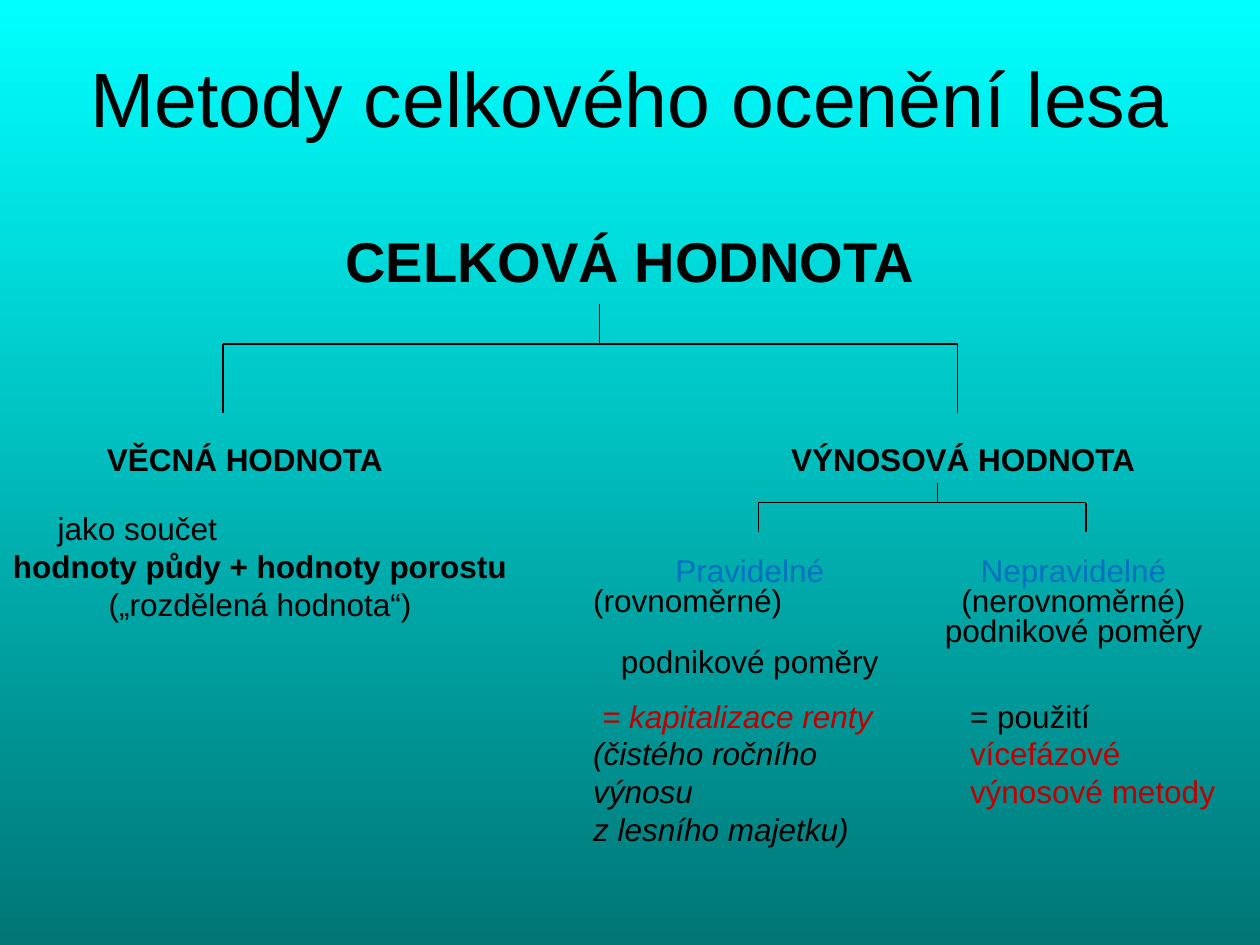
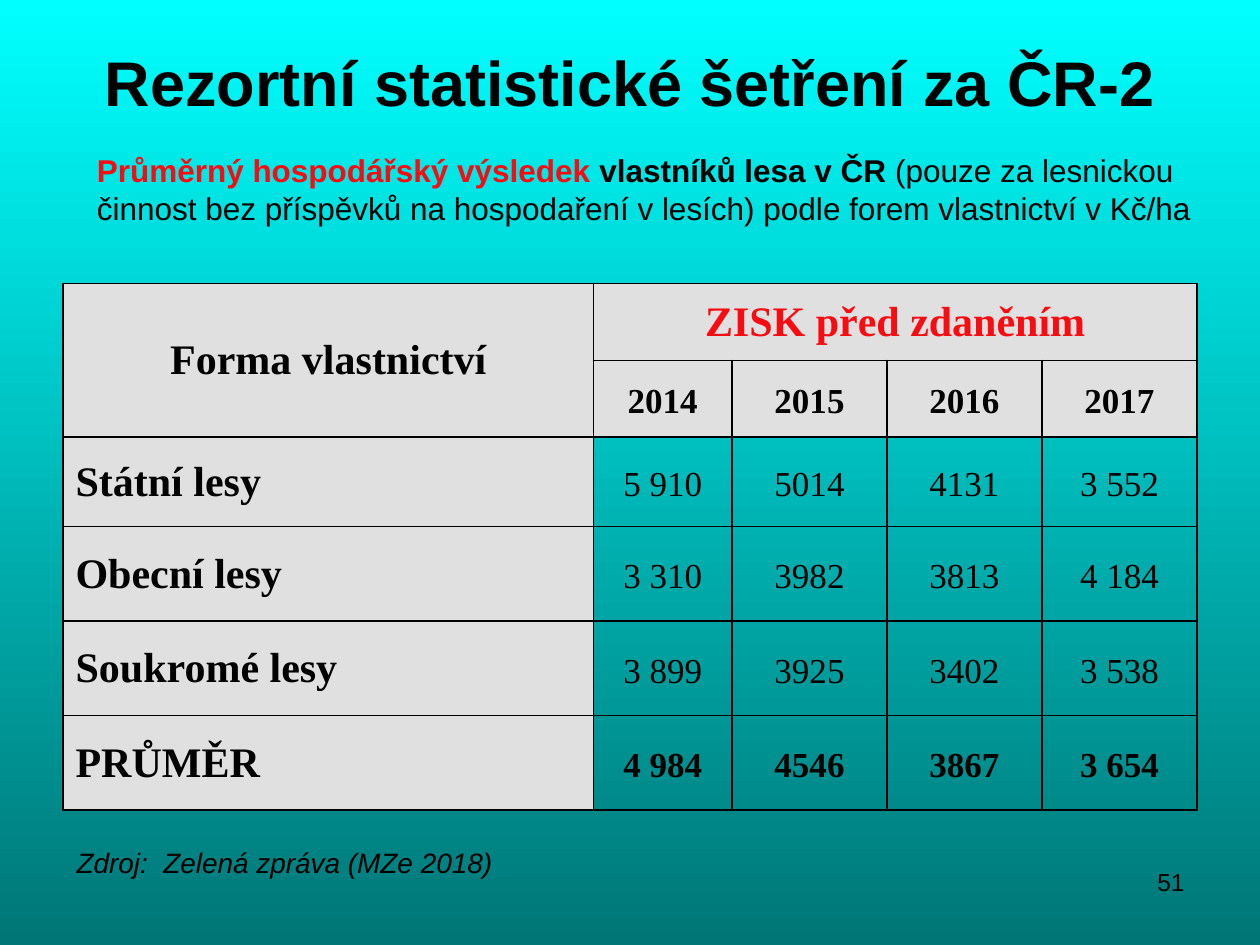
from dataclasses import dataclass
from typing import Optional

import pptx
import pptx.dml.color
import pptx.enum.shapes
import pptx.enum.text
import pptx.oxml
import pptx.oxml.ns
import pptx.util
from pptx.slide import Slide

ALIGN = pptx.enum.text.PP_ALIGN
ANCHOR = pptx.enum.text.MSO_ANCHOR
BLACK, RED, DARK_RED, BLUE, GREY = "000000", "F80C12", "C00000", "0070C0", "E0E0E0"
GRADIENT = ("00FFFF", "007676")
SANS, SERIF = "Arial", "Times New Roman"

# The slide is a grid of 100 columns by 75 rows.
COLS, ROWS = 100, 75
WIDTH, HEIGHT = pptx.util.Inches(10), pptx.util.Inches(7.5)


@dataclass(frozen=True)
class Box:
    left: float
    top: float
    width: float
    height: float


@dataclass(frozen=True)
class Run:
    text: str
    color: Optional[str] = None
    bold: Optional[bool] = None
    italic: Optional[bool] = None


@dataclass(frozen=True)
class Para:
    runs: tuple[Run, ...]
    align: Optional[int] = None
    indent: float = 0
    before: float = 0


@dataclass(frozen=True)
class Fork:
    """A stem that falls to a bar, with a drop at each end of the bar."""
    stem: float
    top: float
    bar: float
    bottom: float
    left: float
    right: float


def x(cols: float) -> int:
    return round(WIDTH * cols / COLS)


def y(rows: float) -> int:
    return round(HEIGHT * rows / ROWS)


def rgb(color: str) -> pptx.dml.color.RGBColor:
    return pptx.dml.color.RGBColor.from_string(color)


def line(text: str, align: Optional[int] = None, indent: float = 0,
         before: float = 0, **style) -> Para:
    """A paragraph of one run."""
    return Para((Run(text, **style),), align, indent, before)


def write(tf, *paras: Para | str, size: float = 18, font: str = SANS,
          color: str = BLACK, bold: bool = False, italic: bool = False,
          align: int = ALIGN.LEFT, spacing: float = 1.0) -> None:
    for i, para in enumerate(paras):
        para = line(para) if isinstance(para, str) else para
        p = tf.paragraphs[0] if i == 0 else tf.add_paragraph()
        p.alignment = align if para.align is None else para.align
        p.line_spacing = spacing
        p.space_before = pptx.util.Pt(para.before)
        if para.indent:
            p._p.get_or_add_pPr().set("marL", str(x(para.indent)))
        for run in para.runs:
            r = p.add_run()
            r.text = run.text
            r.font.name, r.font.size = font, pptx.util.Pt(size)
            r.font.color.rgb = rgb(run.color or color)
            r.font.bold = bold if run.bold is None else run.bold
            r.font.italic = italic if run.italic is None else run.italic


def add_text(slide: Slide, box: Box, *paras: Para | str,
             anchor: int = ANCHOR.TOP, **style) -> None:
    sp = slide.shapes.add_textbox(x(box.left), y(box.top), x(box.width), y(box.height))
    tf = sp.text_frame
    tf.word_wrap = True
    tf.vertical_anchor = anchor
    write(tf, *paras, **style)


def add_slide(prs, title: str, title_height: float, **style) -> Slide:
    """A blank slide with the shared background and centred title."""
    slide = prs.slides.add_slide(prs.slide_layouts[6])
    fill = slide.background.fill
    fill.gradient()
    fill.gradient_angle = 270
    for stop, color, position in zip(fill.gradient_stops, GRADIENT, (0, 1)):
        stop.color.rgb = rgb(color)
        stop.position = position
    add_text(slide, Box(5, 3, 90, title_height), title,
             anchor=ANCHOR.MIDDLE, align=ALIGN.CENTER, **style)
    return slide


def add_line(slide: Slide, x1: float, y1: float, x2: float, y2: float) -> None:
    cxn = slide.shapes.add_connector(
        pptx.enum.shapes.MSO_CONNECTOR.STRAIGHT, x(x1), y(y1), x(x2), y(y2))
    cxn.line.color.rgb = rgb(BLACK)
    cxn.line.width = pptx.util.Pt(0.75)
    cxn._element.spPr.append(pptx.oxml.parse_xml(
        f'<a:effectLst {pptx.oxml.ns.nsdecls("a")}/>'))


def add_fork(slide: Slide, fork: Fork) -> None:
    add_line(slide, fork.stem, fork.top, fork.stem, fork.bar)
    add_line(slide, fork.left, fork.bar, fork.right, fork.bar)
    for end in (fork.left, fork.right):
        add_line(slide, end, fork.bar, end, fork.bottom)


def format_cell(cell, fill: Optional[str]) -> None:
    """Fill the cell, or leave it clear, and rule its four sides."""
    cell.vertical_anchor = ANCHOR.MIDDLE
    if fill:
        cell.fill.solid()
        cell.fill.fore_color.rgb = rgb(fill)
    else:
        cell.fill.background()
    tc_pr = cell._tc.get_or_add_tcPr()
    for i, side in enumerate("LRTB"):
        tc_pr.insert(i, pptx.oxml.parse_xml(
            f'<a:ln{side} {pptx.oxml.ns.nsdecls("a")} w="12700"><a:solidFill>'
            f'<a:srgbClr val="{BLACK}"/></a:solidFill></a:ln{side}>'))


def add_profit_table(slide: Slide) -> None:
    widths = (42.1, 11, 12.3, 12.3, 12.3)
    heights = (6.1, 6.1, 7.1, 7.5, 7.5, 7.5)
    years = ("2014", "2015", "2016", "2017")
    owners = {
        "Státní lesy": ("5 910", "5014", "4131", "3 552"),
        "Obecní lesy": ("3 310", "3982", "3813", "4 184"),
        "Soukromé lesy": ("3 899", "3925", "3402", "3 538"),
        "PRŮMĚR": ("4 984", "4546", "3867", "3 654"),
    }
    table = slide.shapes.add_table(
        len(heights), len(widths), x(5), y(22.5), x(sum(widths)), y(sum(heights))).table
    table.first_row = table.horz_banding = False
    for col, width in zip(table.columns, widths):
        col.width = x(width)
    for row, height in zip(table.rows, heights):
        row.height = y(height)
    for i, row in enumerate(table.rows):
        for j, cell in enumerate(row.cells):
            format_cell(cell, GREY if i < 2 or j == 0 else None)

    heading = dict(size=24, font=SERIF, bold=True)
    table.cell(0, 0).merge(table.cell(1, 0))
    table.cell(0, 1).merge(table.cell(0, len(years)))
    write(table.cell(0, 0).text_frame, "Forma vlastnictví", align=ALIGN.CENTER, **heading)
    write(table.cell(0, 1).text_frame, "ZISK před zdaněním", color=RED,
          align=ALIGN.CENTER, **heading)
    for i, owner in enumerate(owners, start=2):
        write(table.cell(i, 0).text_frame, owner, **heading)
    for i, values in enumerate((years, *owners.values()), start=1):
        for j, value in enumerate(values, start=1):
            cell = table.cell(i, j)
            cell.margin_left = cell.margin_right = x(0.7)
            cell.margin_top = cell.margin_bottom = 0
            write(cell.text_frame, value, size=20, font=SERIF,
                  bold=i in (1, len(heights) - 1), align=ALIGN.CENTER, spacing=1.15)


def build_methods(prs) -> None:
    slide = add_slide(prs, "Metody celkového ocenění lesa", 9.3, size=44)
    add_text(slide, Box(5, 17.5, 90, 6), "CELKOVÁ HODNOTA", size=32, bold=True,
             align=ALIGN.CENTER)
    add_fork(slide, Fork(47.6, 24.1, 27.3, 32.8, 17.7, 76))
    add_fork(slide, Fork(74.4, 38.3, 39.9, 42.2, 60.2, 86.2))
    add_text(slide, Box(7.5, 34.4, 25.6, 4), "VĚCNÁ HODNOTA", bold=True)
    add_text(slide, Box(61.8, 34.4, 31.5, 4), "VÝNOSOVÁ HODNOTA", bold=True)
    add_text(slide, Box(0, 39.9, 41.3, 10),
             line("jako součet", align=ALIGN.LEFT, indent=3.6),
             line("hodnoty půdy + hodnoty porostu", bold=True),
             "(„rozdělená hodnota“)", align=ALIGN.CENTER)

    conditions = dict(align=ALIGN.CENTER, spacing=0.8)
    add_text(slide, Box(46.1, 43.8, 26.8, 8.3),
             line("Pravidelné", color=BLUE),
             line("(rovnoměrné)", align=ALIGN.LEFT),
             line("podnikové poměry", before=17.3), **conditions)
    add_text(slide, Box(72, 43.8, 26.4, 8.3),
             line("Nepravidelné", color=BLUE),
             "(nerovnoměrné)", "podnikové poměry", **conditions)
    add_text(slide, Box(46.1, 54.8, 26.8, 13.1),
             line("= kapitalizace renty", indent=0.7, color=DARK_RED),
             "(čistého ročního výnosu", "z lesního majetku)", italic=True)
    add_text(slide, Box(76, 54.8, 22.8, 10.1),
             Para((Run("= použití "), Run("vícefázové výnosové metody", DARK_RED))))


def build_survey(prs) -> None:
    slide = add_slide(prs, "Rezortní statistické šetření za ČR-2", 6.9, size=36, bold=True)
    add_text(slide, Box(6.7, 11.5, 89.8, 7.1), Para((
        Run("Průměrný hospodářský výsledek", RED, bold=True),
        Run(" vlastníků lesa v ČR", bold=True),
        Run(" (pouze za lesnickou činnost bez příspěvků na hospodaření v lesích)"
            " podle forem vlastnictví v Kč/ha"))))
    add_profit_table(slide)
    add_text(slide, Box(5.1, 66.6, 61.4, 3.7), "Zdroj:  Zelená zpráva (MZe 2018)",
             size=16, italic=True)
    add_text(slide, Box(71.7, 68.3, 23.3, 5.2), "51", size=14, align=ALIGN.RIGHT)


def main() -> None:
    prs = pptx.Presentation()
    prs.slide_width, prs.slide_height = WIDTH, HEIGHT
    build_methods(prs)
    build_survey(prs)
    prs.save("out.pptx")


if __name__ == "__main__":
    main()
